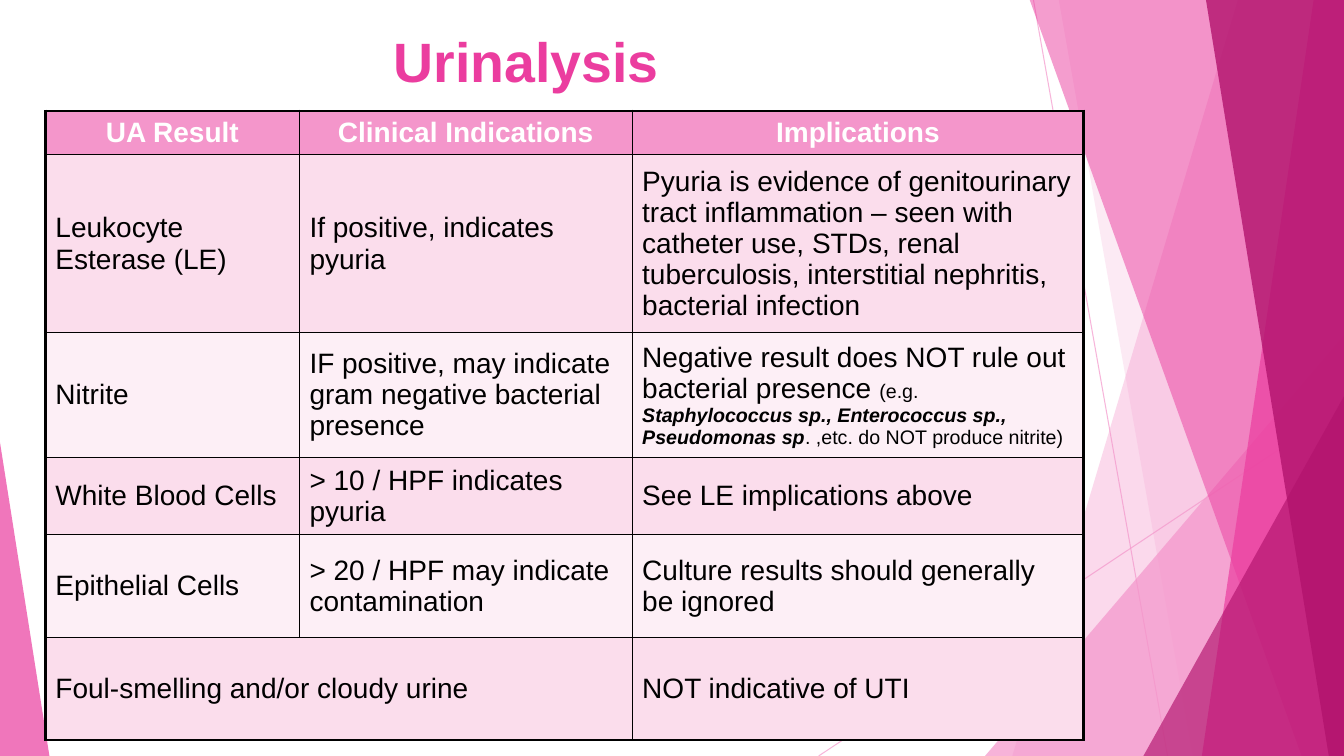
from lxml import etree
from pptx import Presentation
from pptx.dml.color import RGBColor
from pptx.enum import shapes, text
from pptx.oxml.ns import qn
from pptx.util import Inches, Pt

THEME = {
    "font": "Arial", "title_size": 39.6, "body_size": 20, "note_size": 14,
    "light": "F496CB", "pink": "EB3D9F", "deep": "B2136D",
    "black": "000000", "white": "FFFFFF", "bands": ("FBDDEC", "FDEFF6"),
    "outer": 2.25, "inner": 1, "hairline": 0.75,
}
WIDTH, HEIGHT = 13.33, 7.5

TITLE = "Urinalysis"
HEADINGS = ("UA Result", "Clinical Indications", "Implications")
NITRITE_NOTE = [
    ("Negative result does NOT rule out bacterial presence ", "body"),
    ("(e.g. ", "note"),
    ("Staphylococcus sp., Enterococcus sp., Pseudomonas sp", "species"),
    (". ,etc. do NOT produce nitrite)", "note"),
]
RESULTS = [
    ("Leukocyte Esterase (LE)", "If positive, indicates pyuria",
     "Pyuria is evidence of genitourinary tract inflammation – seen with catheter use, "
     "STDs, renal tuberculosis, interstitial nephritis, bacterial infection"),
    ("Nitrite", "IF positive, may indicate gram negative bacterial presence", NITRITE_NOTE),
    ("White Blood Cells", "> 10 / HPF indicates pyuria", "See LE implications above"),
    ("Epithelial Cells", "> 20 / HPF may indicate contamination",
     "Culture results should generally be ignored"),
    ("Foul-smelling and/or cloudy urine", None, "NOT indicative of UTI"),
]
COLUMN_WIDTHS = (2.52, 3.3, 4.48)
ROW_HEIGHTS = (0.41, 1.69, 1.05, 0.73, 1.02, 1.02)

RAYS = [((10.25, 0), (11.58, HEIGHT)), ((WIDTH, 4.03), (8.12, HEIGHT))]
# Facets, back to front: bands are (top left x, bottom left x, colour, opacity %)
# and reach the right edge; triangles are (left, top, width, apex, colour, opacity %).
FACETS = [
    ("band", 12.28, 10.04, "light", 36),
    ("band", 10.5, 11.83, "light", 20),
    ("triangle", 9.77, 3.33, 3.56, 1, "light", 72),
    ("band", 10.21, 12.91, "pink", 50),
    ("band", 13.03, 11.92, "pink", 70),
    ("band", 11.96, 13.18, "deep", 80),
    ("triangle", 11.34, 3.93, 1.99, 1, "deep", 66),
    ("triangle", 0, 4.39, 0.49, 0, "pink", 70),
]


def rgb(name):
    return RGBColor.from_string(THEME.get(name, name))


def set_opacity(element, percent):
    for color in element.iter(qn("a:srgbClr")):
        etree.SubElement(color, qn("a:alpha"), val=str(percent * 1000))


def add_ray(slide, start, end):
    ray = slide.shapes.add_connector(
        shapes.MSO_CONNECTOR.STRAIGHT, *(Inches(v) for v in start + end))
    ray.line.color.rgb = rgb("light")
    ray.line.width = Pt(THEME["hairline"])
    properties = ray._element.spPr
    set_opacity(properties, 70)
    etree.SubElement(properties, qn("a:effectLst"))


def add_facet(slide, kind, *geometry):
    *place, color, opacity = geometry
    if kind == "band":
        top_x, bottom_x = place
        corners = [(top_x, -0.01), (WIDTH, -0.01), (WIDTH, HEIGHT), (bottom_x, HEIGHT)]
        corners = [(Inches(x), Inches(y)) for x, y in corners]
        outline = slide.shapes.build_freeform(*corners[0], scale=1.0)
        outline.add_line_segments(corners[1:], close=True)
        facet = outline.convert_to_shape()
    else:
        left, top, width, apex = place
        facet = slide.shapes.add_shape(
            shapes.MSO_SHAPE.ISOSCELES_TRIANGLE, Inches(left), Inches(top),
            Inches(width), Inches(HEIGHT - top))
        facet.adjustments[0] = apex
    facet.shadow.inherit = False
    facet.line.fill.background()
    facet.fill.solid()
    facet.fill.fore_color.rgb = rgb(color)
    set_opacity(facet._element.spPr, opacity)


def add_run(paragraph, words, size, color, bold=False, italic=False):
    run = paragraph.add_run()
    run.text = words
    font = run.font
    font.name, font.size = THEME["font"], Pt(size)
    font.bold, font.italic = bold, italic
    font.color.rgb = rgb(color)


def add_title(slide):
    box = slide.shapes.add_textbox(Inches(0.45), Inches(0.21), Inches(9.54), Inches(0.77))
    frame = box.text_frame
    frame.word_wrap = True
    frame.vertical_anchor = text.MSO_ANCHOR.MIDDLE
    frame.paragraphs[0].alignment = text.PP_ALIGN.CENTER
    add_run(frame.paragraphs[0], TITLE, THEME["title_size"], "pink", bold=True)


def set_borders(cell, widths):
    """Draw the cell's left, right, top and bottom edges in the given points."""
    properties = cell._tc.get_or_add_tcPr()
    for position, (side, width) in enumerate(zip("LRTB", widths)):
        edge = etree.Element(qn(f"a:ln{side}"), w=str(Pt(width)))
        fill = etree.SubElement(edge, qn("a:solidFill"))
        etree.SubElement(fill, qn("a:srgbClr"), val=THEME["black"])
        properties.insert(position, edge)


def fill_cell(cell, content, heading):
    cell.vertical_anchor = text.MSO_ANCHOR.MIDDLE
    paragraph = cell.text_frame.paragraphs[0]
    paragraph.alignment = text.PP_ALIGN.CENTER if heading else text.PP_ALIGN.LEFT
    pieces = [(content, "body")] if isinstance(content, str) else content or []
    for words, style in pieces:
        size = THEME["body_size" if style == "body" else "note_size"]
        species = style == "species"
        add_run(paragraph, words, size, "white" if heading else "black",
                bold=heading or species, italic=species)


def add_results_table(slide):
    rows = [HEADINGS] + RESULTS
    last_row, last_column = len(rows) - 1, len(HEADINGS) - 1
    table = slide.shapes.add_table(
        len(rows), len(HEADINGS), Inches(0.45), Inches(1.1),
        Inches(sum(COLUMN_WIDTHS)), Inches(sum(ROW_HEIGHTS))).table
    for column, width in zip(table.columns, COLUMN_WIDTHS):
        column.width = Inches(width)
    for row, height in zip(table.rows, ROW_HEIGHTS):
        row.height = Inches(height)
    table.cell(last_row, 0).merge(table.cell(last_row, 1))
    for r, contents in enumerate(rows):
        for c, content in enumerate(contents):
            cell = table.cell(r, c)
            fill_cell(cell, content, heading=r == 0)
            cell.fill.solid()
            cell.fill.fore_color.rgb = rgb(THEME["bands"][(r - 1) % 2] if r else "light")
            on_outside = (c == 0, c == last_column, r == 0, r == last_row)
            set_borders(cell, [THEME["outer" if out else "inner"] for out in on_outside])


def main():
    deck = Presentation()
    deck.slide_width, deck.slide_height = Inches(WIDTH), Inches(HEIGHT)
    slide = deck.slides.add_slide(deck.slide_layouts[6])
    for start, end in RAYS:
        add_ray(slide, start, end)
    for facet in FACETS:
        add_facet(slide, *facet)
    add_title(slide)
    add_results_table(slide)
    deck.save("out.pptx")


if __name__ == "__main__":
    main()
